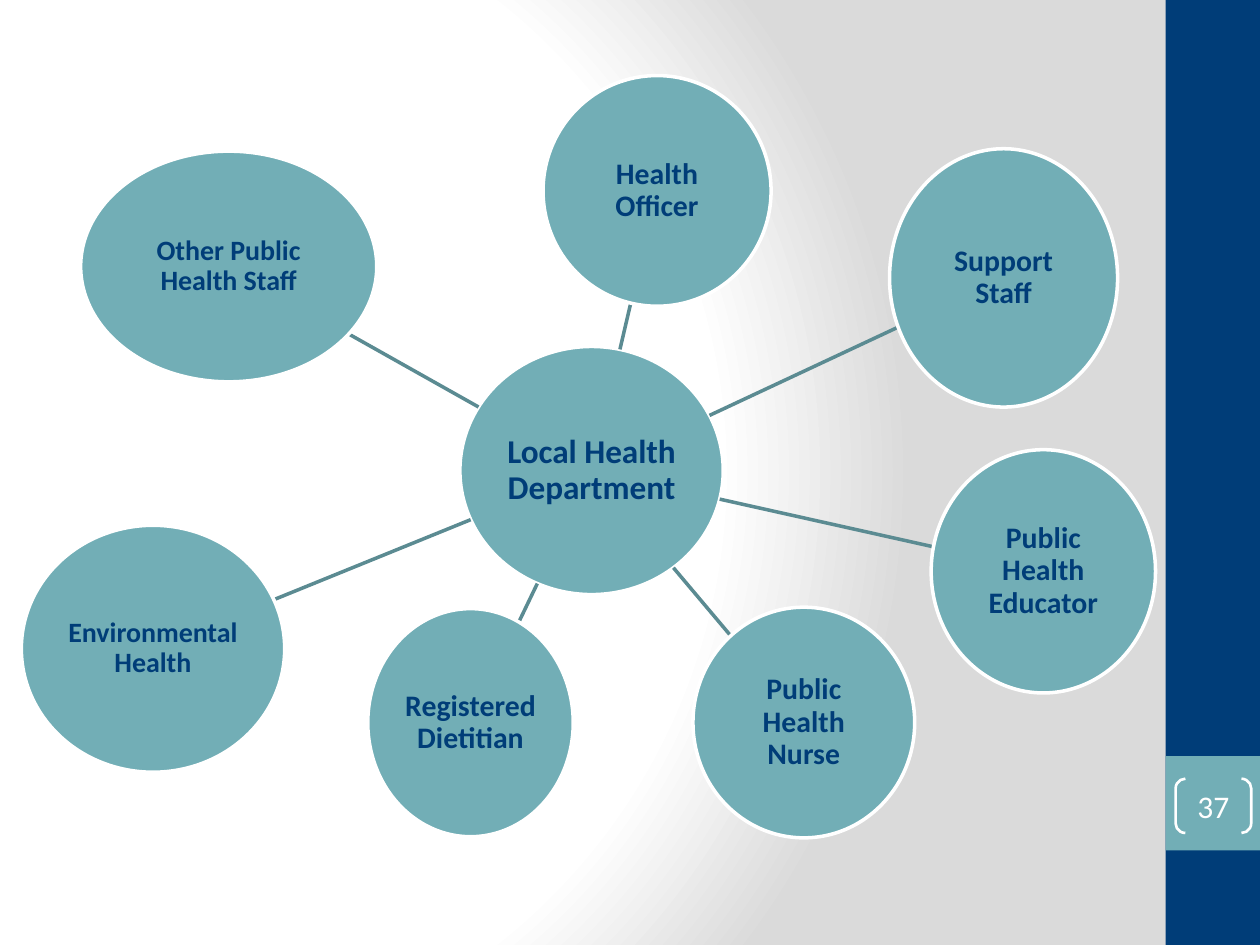
from math import hypot

from pptx import Presentation
from pptx.dml.color import RGBColor
from pptx.enum.shapes import MSO_CONNECTOR as CONN, MSO_SHAPE as SHAPE
from pptx.enum.text import MSO_ANCHOR as ANCHOR, PP_ALIGN as ALIGN
from pptx.oxml import parse_xml
from pptx.oxml.ns import nsdecls, qn
from pptx.util import Pt

COLORS = {
    "navy": "003D78",
    "teal": "72AEB6",
    "spoke": "5B8B92",
    "white": "FFFFFF",
    "gray": "DADADA",
}
HUB = ("Local Health Department", 19, (262.8, 198, 150.5, 141.8))
STAFF = [
    ("Health Officer", 17, (310.3, 43.2, 130.3, 131.8)),
    ("Support Staff", 17, (508.3, 85, 130.3, 147.6)),
    ("Public Health Educator", 17, (532.1, 257, 128.2, 139)),
    ("Public Health Nurse", 17, (396, 347, 126.7, 131.8)),
    ("Registered Dietitian", 17, (210.2, 347.8, 117.4, 130.3)),
    ("Environmental Health", 16, (12.2, 300.2, 150.5, 141.1)),
    ("Other Public Health Staff", 16, (46.1, 86.4, 169.2, 131.8)),
]


def rgb(name):
    """Return the named color."""
    return RGBColor.from_string(COLORS[name])


def set_background(s):
    """Fill the slide background with a circular gradient."""
    s.background.fill.solid()
    bg_pr = s._element.cSld.find(qn("p:bg")).find(qn("p:bgPr"))
    stops = "".join(
        f'<a:gs pos="{pos}"><a:srgbClr val="{COLORS[name]}"/></a:gs>'
        for pos, name in ((0, "white"), (75000, "white"), (100000, "gray"))
    )
    grad = parse_xml(
        f'<a:gradFill {nsdecls("a")} rotWithShape="1"><a:gsLst>{stops}</a:gsLst>'
        '<a:path path="circle"><a:fillToRect l="20000" t="50000" r="100000" b="50000"/>'
        "</a:path></a:gradFill>"
    )
    bg_pr.replace(bg_pr[0], grad)


def add_shape(s, kind, box, fill=None, line=None, width=2):
    """Add a flat preset shape with optional fill and outline."""
    sp = s.shapes.add_shape(kind, *map(Pt, box))
    sp.shadow.inherit = False
    if fill:
        sp.fill.solid()
        sp.fill.fore_color.rgb = rgb(fill)
    else:
        sp.fill.background()
    if line:
        sp.line.color.rgb = rgb(line)
        sp.line.width = Pt(width)
    else:
        sp.line.fill.background()
    return sp


def add_text(sp, text, size, color, bold=False, margin=0, spacing=1.0):
    """Write centered text inside a shape."""
    tf = sp.text_frame
    frame = dict.fromkeys(
        ("margin_left", "margin_top", "margin_right", "margin_bottom"), Pt(margin)
    )
    frame.update(word_wrap=True, vertical_anchor=ANCHOR.MIDDLE)
    for key, value in frame.items():
        setattr(tf, key, value)
    p = tf.paragraphs[0]
    p.alignment = ALIGN.CENTER
    p.line_spacing = spacing
    r = p.add_run()
    r.text = text
    for key, value in {"name": "Calibri", "size": Pt(size), "bold": bold}.items():
        setattr(r.font, key, value)
    r.font.color.rgb = rgb(color)


def add_circle(s, text, size, box):
    """Add a labeled ellipse."""
    sp = add_shape(s, SHAPE.OVAL, box, "teal", "white")
    add_text(sp, text, size, "navy", bold=True, margin=0.72, spacing=0.9)


def edge_point(box, toward):
    """Return where the ray from an ellipse's center to another's leaves its edge."""
    (x, y, w, h), (tx, ty, tw, th) = box, toward
    cx, cy = x + w / 2, y + h / 2
    dx, dy = tx + tw / 2 - cx, ty + th / 2 - cy
    scale = 1 / hypot(dx / (w / 2), dy / (h / 2))
    return cx + dx * scale, cy + dy * scale


def add_spoke(s, start, end):
    """Join two ellipses with a straight line between their edges."""
    points = edge_point(start, end) + edge_point(end, start)
    line = s.shapes.add_connector(CONN.STRAIGHT, *map(Pt, points))
    line.line.color.rgb = rgb("spoke")
    line.line.width = Pt(2)
    line._element.spPr.append(parse_xml(f'<a:effectLst {nsdecls("a")}/>'))


def add_sidebar(s, number):
    """Add the side band with its bracketed slide number."""
    add_shape(s, SHAPE.RECTANGLE, (666, 0, 54, 540), "navy")
    add_shape(s, SHAPE.RECTANGLE, (666, 432, 54, 54), "teal")
    sp = add_shape(s, SHAPE.DOUBLE_BRACKET, (671.8, 445, 43.2, 31), line="white", width=1.5)
    sp.adjustments[0] = 0.18
    add_text(sp, number, 18, "white")


def main():
    """Build and save the slide."""
    prs = Presentation()
    prs.slide_width, prs.slide_height = Pt(720), Pt(540)
    s = prs.slides.add_slide(prs.slide_layouts[6])
    set_background(s)
    add_sidebar(s, "37")
    add_circle(s, *HUB)
    for text, size, box in STAFF:
        add_spoke(s, HUB[2], box)
        add_circle(s, text, size, box)
    prs.save("out.pptx")


if __name__ == "__main__":
    main()
